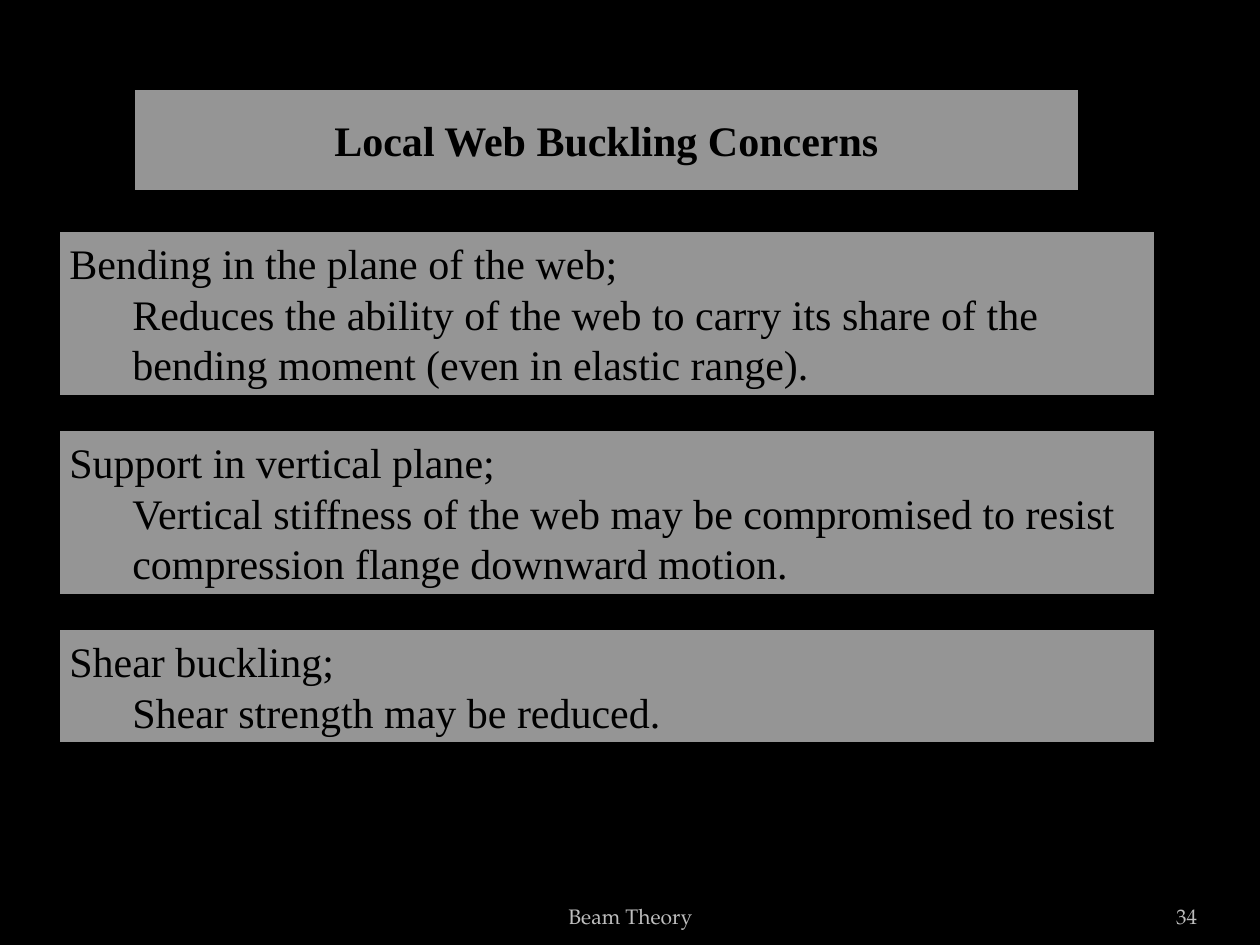
from dataclasses import dataclass

from lxml import etree
from pptx import Presentation
from pptx.dml.color import RGBColor
from pptx.enum.shapes import MSO_SHAPE
from pptx.enum.text import MSO_ANCHOR, MSO_AUTO_SIZE, PP_ALIGN
from pptx.oxml.ns import qn
from pptx.util import Pt

PX = 914400 // 126


@dataclass(frozen=True)
class Theme:
    background: RGBColor = RGBColor(0, 0, 0)
    panel: RGBColor = RGBColor(0xF2, 0xF2, 0xF2)
    panel_opacity: int = 62
    outline: RGBColor = RGBColor(0, 0, 0)
    outline_width: int = 3
    ink: RGBColor = RGBColor(0, 0, 0)
    muted: RGBColor = RGBColor(0xBD, 0xBD, 0xBD)
    body_font: str = "Times New Roman"
    footer_font: str = "TeX Gyre Pagella"
    body_size: int = 24
    footer_size: int = 12


THEME = Theme()

TITLE = "Local Web Buckling Concerns"
# Heading, explanation, number of text lines
CONCERNS = [
    ("Bending in the plane of the web;",
     "Reduces the ability of the web to carry its share of the "
     "bending moment (even in elastic range).", 3),
    ("Support in vertical plane;",
     "Vertical stiffness of the web may be compromised to resist "
     "compression flange downward motion.", 3),
    ("Shear buckling;", "Shear strength may be reduced.", 2),
]
LINE_HEIGHT, PANEL_PADDING, PANEL_GAP, INDENT = 51, 16, 30, 63


def px(*lengths):
    return [length * PX for length in lengths]


def style_panel(shape):
    """Give a shape the translucent fill and heavy outline of a panel."""
    shape.fill.solid()
    shape.fill.fore_color.rgb = THEME.panel
    color = shape.fill._xPr.find(f"{qn('a:solidFill')}/{qn('a:srgbClr')}")
    etree.SubElement(color, qn("a:alpha"), val=str(THEME.panel_opacity * 1000))
    shape.line.color.rgb = THEME.outline
    shape.line.width = Pt(THEME.outline_width)
    frame = shape.text_frame
    frame.word_wrap = True
    frame.auto_size = MSO_AUTO_SIZE.SHAPE_TO_FIT_TEXT
    frame.vertical_anchor = MSO_ANCHOR.MIDDLE


def style_text(para, font, size, color, align, bold=False):
    para.alignment = align
    for span in para.runs:
        span.font.name = font
        span.font.size = Pt(size)
        span.font.color.rgb = color
        span.font.bold = bold


def add_title(page, left, top, width, height):
    title = page.shapes.title
    title.left, title.top, title.width, title.height = px(left, top, width, height)
    title.text_frame.text = TITLE
    style_panel(title)
    style_text(title.text_frame.paragraphs[0], THEME.body_font,
               THEME.body_size, THEME.ink, PP_ALIGN.CENTER, bold=True)


def add_concern(page, left, top, width, height, heading, explanation):
    panel = page.shapes.add_shape(MSO_SHAPE.RECTANGLE, *px(left, top, width, height))
    panel.shadow.inherit = False
    style_panel(panel)
    frame = panel.text_frame
    frame.text = f"{heading}\n{explanation}"
    for para in frame.paragraphs:
        style_text(para, THEME.body_font, THEME.body_size, THEME.ink, PP_ALIGN.LEFT)
    detail = frame.paragraphs[1]
    detail.level = 1
    properties = detail._p.get_or_add_pPr()
    properties.set("marL", str(INDENT * PX))
    properties.set("indent", "0")


def add_concerns(page, left, top, width):
    for heading, explanation, lines in CONCERNS:
        height = PANEL_PADDING + lines * LINE_HEIGHT
        add_concern(page, left, top, width, height, heading, explanation)
        top += height + PANEL_GAP


def add_footer(page, left, top, width, height, text, align, side_margin):
    box = page.shapes.add_textbox(*px(left, top, width, height))
    frame = box.text_frame
    frame.word_wrap = True
    frame.vertical_anchor = MSO_ANCHOR.BOTTOM
    frame.margin_left = frame.margin_right = side_margin * PX
    frame.text = text
    style_text(frame.paragraphs[0], THEME.footer_font, THEME.footer_size,
               THEME.muted, align)


def main():
    deck = Presentation()
    deck.slide_width, deck.slide_height = px(1260, 945)
    page = deck.slides.add_slide(deck.slide_layouts[5])
    page.background.fill.solid()
    page.background.fill.fore_color.rgb = THEME.background
    add_title(page, 132, 106, 949, 68)
    add_concerns(page, 57, 229, 1100)
    add_footer(page, 1092, 885, 105, 50, "34", PP_ALIGN.RIGHT, 0)
    add_footer(page, 431, 885, 399, 50, "Beam Theory", PP_ALIGN.CENTER, 13)
    deck.save("out.pptx")


if __name__ == "__main__":
    main()
